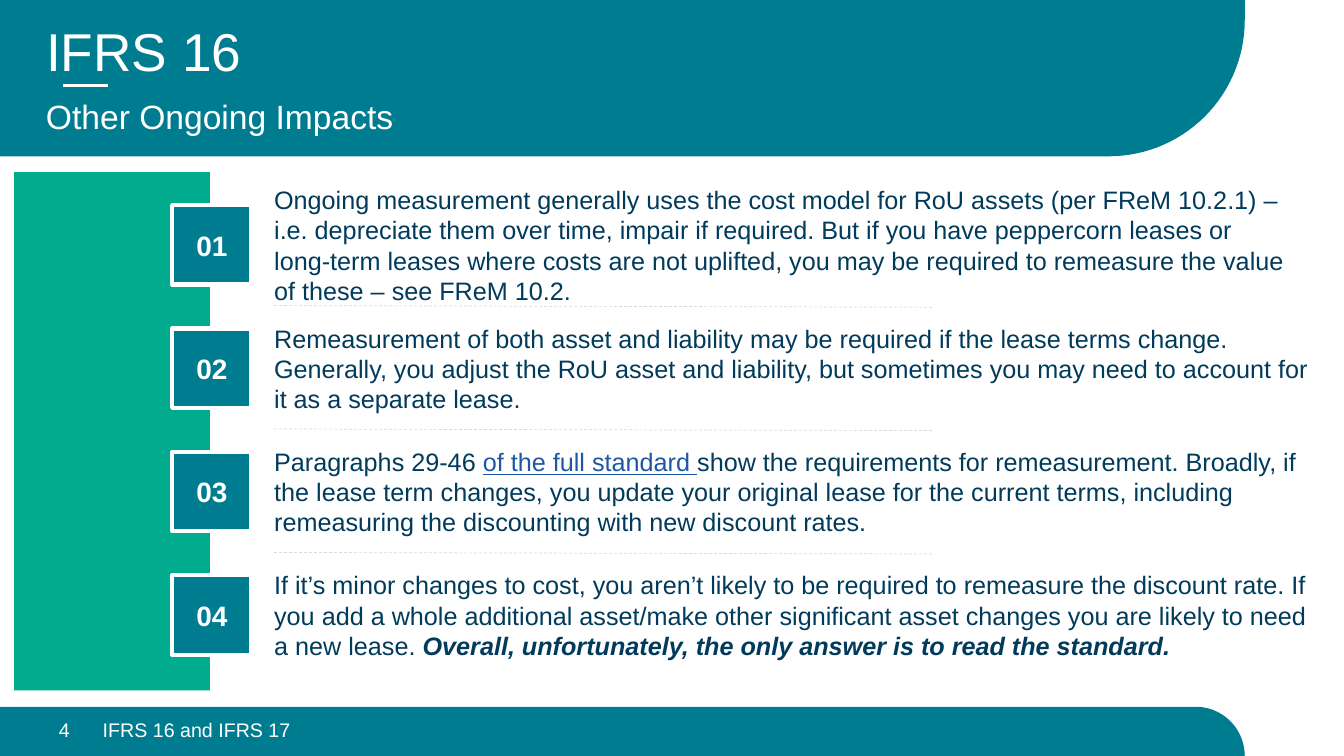
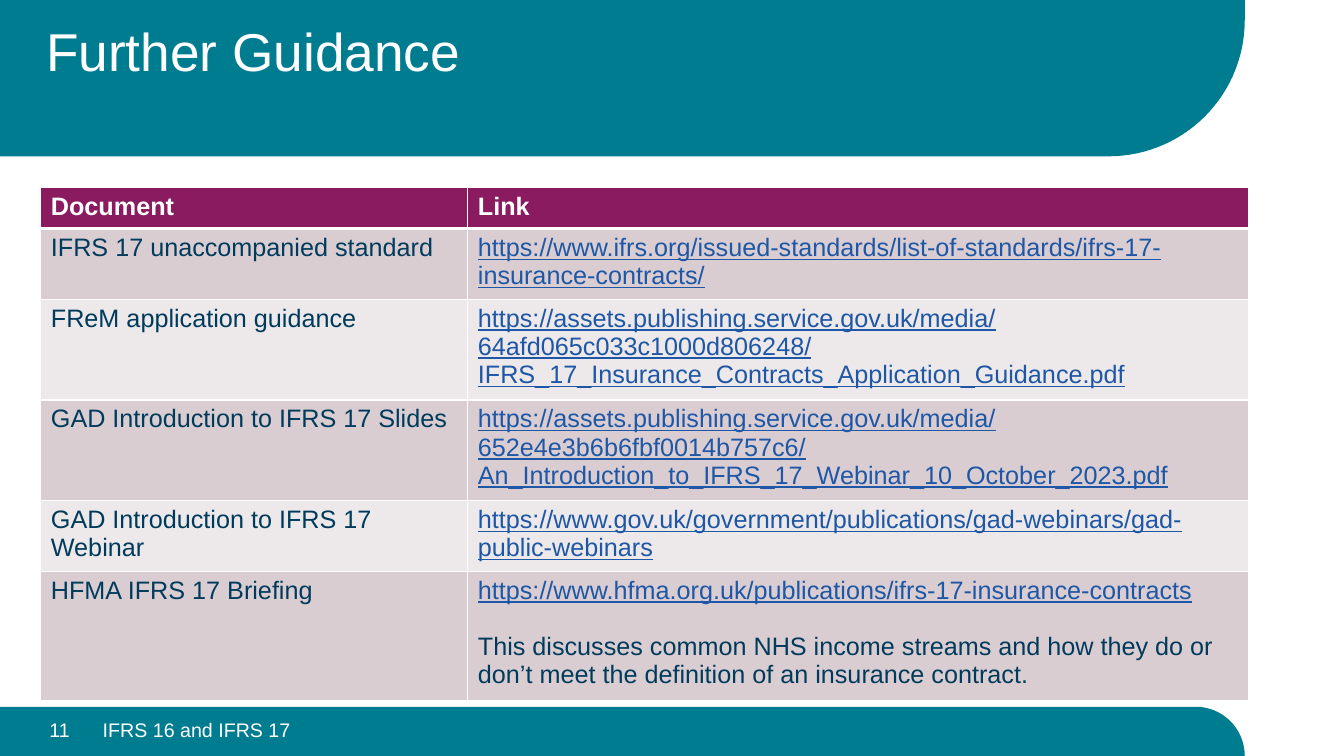
import math
from dataclasses import dataclass

from lxml import etree
from pptx import Presentation
from pptx.dml.color import RGBColor
from pptx.enum.dml import MSO_LINE
from pptx.enum.shapes import MSO_CONNECTOR, MSO_SHAPE
from pptx.enum.text import MSO_ANCHOR, MSO_AUTO_SIZE, PP_ALIGN
from pptx.oxml.ns import qn
from pptx.util import Cm, Pt

LEFT, CENTER, RIGHT = PP_ALIGN.LEFT, PP_ALIGN.CENTER, PP_ALIGN.RIGHT
TOP, MIDDLE = MSO_ANCHOR.TOP, MSO_ANCHOR.MIDDLE
RECT, STRAIGHT, DASH = MSO_SHAPE.RECTANGLE, MSO_CONNECTOR.STRAIGHT, MSO_LINE.DASH
GROW = MSO_AUTO_SIZE.SHAPE_TO_FIT_TEXT

FONT = "Arial"
COLORS = {
    "teal": "007C91", "green": "00AB8E", "navy": "003B5C", "white": "FFFFFF",
    "link": "1D57A5", "rule": "D9D9D9", "plum": "8A1B61",
    "band_dark": "DACDD2", "band_light": "EDE8EA",
}
SLIDE_W, SLIDE_H = 33.87, 19.05
BAND_W = 31.37
HEADER_H, HEADER_R = 3.94, 3.43
FOOTER_TOP = 17.81
FOOTER_R = SLIDE_H - FOOTER_TOP
STEP = 3.11  # distance between numbered points
FIRST_CENTER = 6.17


@dataclass
class Span:
    """A stretch of text in one format."""
    text: str
    link: bool = False
    strong: bool = False


@dataclass
class Point:
    spans: list[Span]
    width: float = 26.26
    height: float = 2.31


@dataclass
class Guide:
    document: str
    link: str
    note: str = ""


POINTS = [
    Point([Span("Ongoing measurement generally uses the cost model for RoU assets (per FReM 10.2.1) – "
                "i.e. depreciate them over time, impair if required. But if you have peppercorn leases "
                "or long-term leases where costs are not uplifted, you may be required to remeasure "
                "the value of these – see FReM 10.2.")], width=25.48, height=3.07),
    Point([Span("Remeasurement of both asset and liability may be required if the lease terms change. "
                "Generally, you adjust the RoU asset and liability, but sometimes you may need to "
                "account for it as a separate lease.")]),
    Point([Span("Paragraphs 29-46 "), Span("of the full standard ", link=True),
           Span("show the requirements for remeasurement. Broadly, if the lease term changes, you "
                "update your original lease for the current terms, including remeasuring the "
                "discounting with new discount rates.")]),
    Point([Span("If it’s minor changes to cost, you aren’t likely to be required to remeasure the "
                "discount rate. If you add a whole additional asset/make other significant asset "
                "changes you are likely to need a new lease. "),
           Span("Overall, unfortunately, the only answer is to read the standard.", strong=True)]),
]
GUIDES = [
    Guide("IFRS 17 unaccompanied standard",
          "https://www.ifrs.org/issued-standards/list-of-standards/ifrs-17-insurance-contracts/"),
    Guide("FReM application guidance",
          "https://assets.publishing.service.gov.uk/media/64afd065c033c1000d806248/"
          "IFRS_17_Insurance_Contracts_Application_Guidance.pdf"),
    Guide("GAD Introduction to IFRS 17 Slides",
          "https://assets.publishing.service.gov.uk/media/652e4e3b6b6fbf0014b757c6/"
          "An_Introduction_to_IFRS_17_Webinar_10_October_2023.pdf"),
    Guide("GAD Introduction to IFRS 17 Webinar",
          "https://www.gov.uk/government/publications/gad-webinars/gad-public-webinars"),
    Guide("HFMA IFRS 17 Briefing",
          "https://www.hfma.org.uk/publications/ifrs-17-insurance-contracts",
          "This discusses common NHS income streams and how they do or don’t meet the definition "
          "of an insurance contract."),
]


def rgb(name: str) -> RGBColor:
    return RGBColor.from_string(COLORS[name])


def write(p, text: str, *, size: float = 18, color: str = "navy", bold: bool = False,
          italic: bool = False, underline: bool = False, align=LEFT, spacing=None) -> None:
    """Add one formatted run to a paragraph."""
    p.alignment = align
    if spacing:
        p.line_spacing = spacing
    r = p.add_run()
    r.text = text
    f = r.font
    f.name, f.size, f.bold, f.italic, f.underline = FONT, Pt(size), bold, italic, underline
    f.color.rgb = rgb(color)


def write_link(p, text: str) -> None:
    write(p, text, color="link", underline=True)


def add_box(s, x: float, y: float, w: float, h: float, anchor=TOP):
    tf = s.shapes.add_textbox(Cm(x), Cm(y), Cm(w), Cm(h)).text_frame
    tf.word_wrap = True
    tf.vertical_anchor = anchor
    return tf


def add_rect(s, x: float, y: float, w: float, h: float, fill: str):
    sp = s.shapes.add_shape(RECT, Cm(x), Cm(y), Cm(w), Cm(h))
    sp.shadow.inherit = False
    sp.fill.solid()
    sp.fill.fore_color.rgb = rgb(fill)
    sp.line.fill.background()
    return sp


def add_rule(s, x1: float, y1: float, x2: float, y2: float, color: str, width: float, dash=None) -> None:
    c = s.shapes.add_connector(STRAIGHT, Cm(x1), Cm(y1), Cm(x2), Cm(y2))
    c.line.color.rgb = rgb(color)
    c.line.width = Pt(width)
    c.line.dash_style = dash
    etree.SubElement(c._element.spPr, qn("a:effectLst"))


def arc(cx: float, cy: float, radius: float, start: int) -> list[tuple[float, float]]:
    """Points of a clockwise quarter circle from the start angle in degrees."""
    angles = [math.radians(start + a) for a in range(0, 91, 3)]
    return [(cx + radius * math.cos(a), cy + radius * math.sin(a)) for a in angles]


def move_bands_to_layout(s) -> None:
    """Outline both bands on a slide, then hand them to its layout."""
    header = [(0, 0), (BAND_W, 0),
              *arc(BAND_W - HEADER_R, HEADER_H - HEADER_R, HEADER_R, 0), (0, HEADER_H)]
    footer = [(0, FOOTER_TOP), *arc(BAND_W - FOOTER_R, SLIDE_H, FOOTER_R, -90), (0, SLIDE_H)]
    for outline in (header, footer):
        first, *rest = [(Cm(x), Cm(y)) for x, y in outline]
        fb = s.shapes.build_freeform(*first)
        fb.add_line_segments(rest)
        sp = fb.convert_to_shape()
        sp.shadow.inherit = False
        sp.fill.solid()
        sp.fill.fore_color.rgb = rgb("teal")
        sp.line.fill.background()
        s.slide_layout.shapes._spTree.append(sp._element)


def add_slide(prs, title: str, number: int):
    s = prs.slides.add_slide(prs.slide_layouts.get_by_name("Title Only"))
    sp = s.shapes.title
    sp.left, sp.top, sp.width, sp.height = Cm(0.91), Cm(0.51), Cm(29.21), Cm(2.69)
    tf = sp.text_frame
    tf.vertical_anchor = TOP
    write(tf.paragraphs[0], title, size=38, color="white", spacing=0.9)
    for x, w, text, align in ((2.34, 27.79, "IFRS 16 and IFRS 17", LEFT),
                              (0.36, 1.65, str(number), RIGHT)):
        tf = add_box(s, x, 17.88, w, 1.02, MIDDLE)
        write(tf.paragraphs[0], text, size=14, color="white", align=align)
    return s


def add_point(s, index: int, point: Point) -> None:
    center = FIRST_CENTER + index * STEP
    tf = add_box(s, 6.91, center - point.height / 2, point.width, point.height, MIDDLE)
    tf.margin_left = tf.margin_right = tf.margin_top = tf.margin_bottom = 0
    tf.auto_size = GROW
    for span in point.spans:
        if span.link:
            write_link(tf.paragraphs[0], span.text)
        else:
            write(tf.paragraphs[0], span.text, bold=span.strong, italic=span.strong)

    sp = add_rect(s, 4.34, center - 1, 2, 2, "teal")
    sp.line.color.rgb = rgb("white")
    sp.line.width = Pt(3)
    sp.text_frame.vertical_anchor = MIDDLE
    write(sp.text_frame.paragraphs[0], f"{index + 1:02}", size=20, color="white",
          bold=True, align=CENTER)


def build_impacts(prs):
    s = add_slide(prs, "IFRS 16", 4)
    add_rule(s, 1.6, 2.16, 2.72, 2.16, "white", 2.25)
    tf = add_box(s, 0.91, 2.41, 29.21, 1.27)
    write(tf.paragraphs[0], "Other Ongoing Impacts", size=24, color="white", spacing=0.9)
    add_rect(s, 0.36, 4.34, 4.93, 13.06, "green")
    for i, point in enumerate(POINTS):
        add_point(s, i, point)
    for i in range(len(POINTS) - 1):
        y = 7.7 + i * STEP
        add_rule(s, 6.91, y, 23.5, y + 0.04, "rule", 0.5, DASH)
    return s


def style_cell(cell, fill: str, top: float = 1, bottom: float = 1) -> None:
    """Fill a cell and give it white borders, widths in points."""
    cell.fill.solid()
    cell.fill.fore_color.rgb = rgb(fill)
    tc_pr = cell._tc.get_or_add_tcPr()
    borders = (("L", 1), ("R", 1), ("T", top), ("B", bottom))
    for i, (side, width) in enumerate(borders):
        ln = etree.Element(qn(f"a:ln{side}"), w=str(Pt(width)))
        solid = etree.SubElement(ln, qn("a:solidFill"))
        etree.SubElement(solid, qn("a:srgbClr"), val=COLORS["white"])
        tc_pr.insert(i, ln)


def build_guidance(prs) -> None:
    s = add_slide(prs, "Further Guidance", 11)
    widths, row_h = (10.76, 19.68), 1.03
    rows = len(GUIDES) + 1
    table = s.shapes.add_table(rows, 2, Cm(1.03), Cm(4.73), Cm(sum(widths)), Cm(rows * row_h)).table
    for column, width in zip(table.columns, widths):
        column.width = Cm(width)
    for cell, text in zip(table.rows[0].cells, ("Document", "Link")):
        style_cell(cell, "plum", bottom=3)
        write(cell.text_frame.paragraphs[0], text, color="white", bold=True)
    for i, guide in enumerate(GUIDES, start=1):
        document, link = table.rows[i].cells
        for cell in (document, link):
            style_cell(cell, "band_dark" if i % 2 else "band_light", top=3 if i == 1 else 1)
        write(document.text_frame.paragraphs[0], guide.document)
        write_link(link.text_frame.paragraphs[0], guide.link)
        if guide.note:
            p = link.text_frame.add_paragraph()
            p.space_before = Pt(20)
            write(p, guide.note)


def main() -> None:
    prs = Presentation()
    prs.slide_width, prs.slide_height = Cm(SLIDE_W), Cm(SLIDE_H)
    move_bands_to_layout(build_impacts(prs))
    build_guidance(prs)
    prs.save("out.pptx")


if __name__ == "__main__":
    main()
